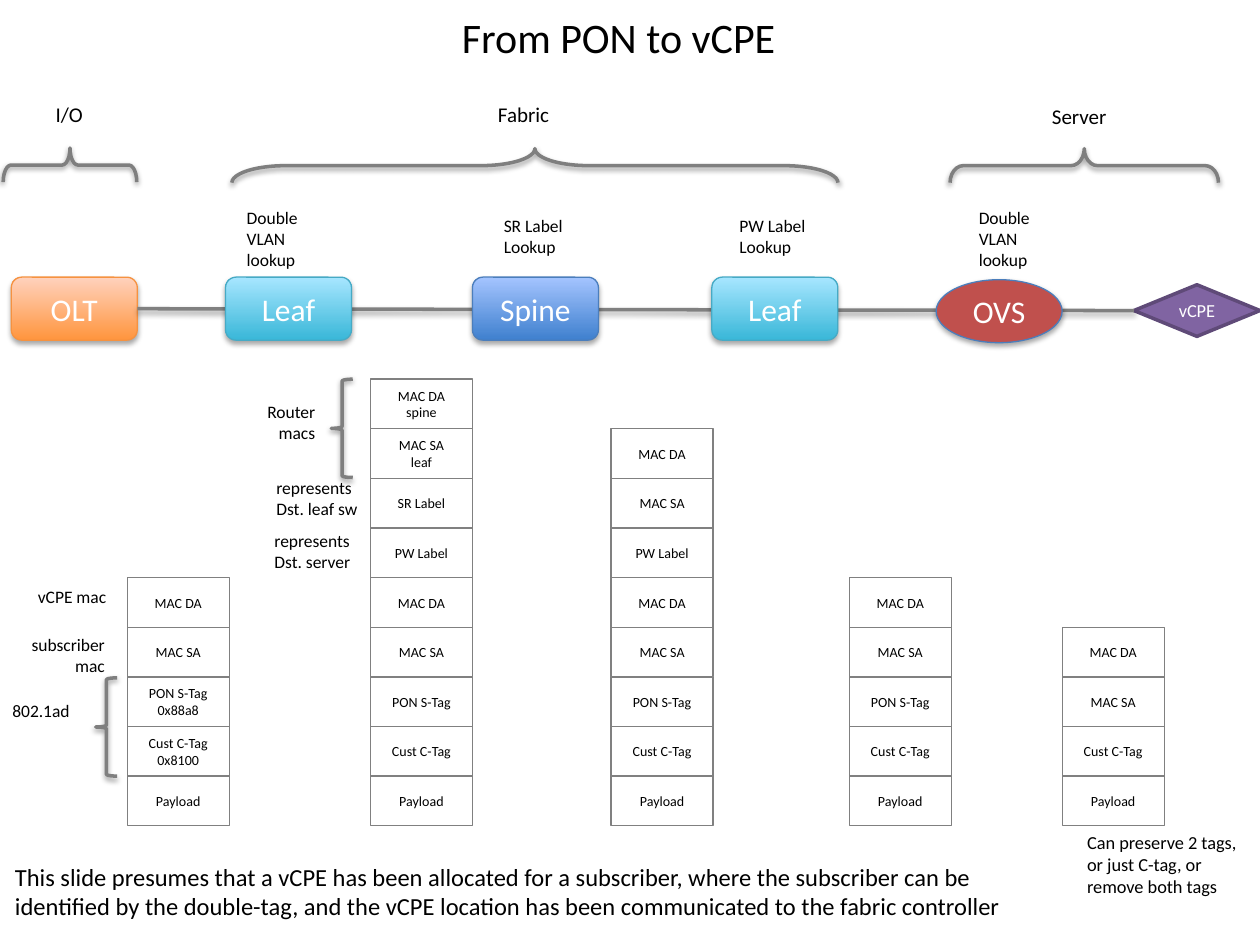
from lxml import etree
from pptx import Presentation
from pptx import util as u
from pptx.dml.color import RGBColor
from pptx.enum import shapes, text
from pptx.oxml.ns import qn

KIND = shapes.MSO_SHAPE
SIDE = text.PP_ALIGN
LEFT, MID, RIGHT = SIDE.LEFT, SIDE.CENTER, SIDE.RIGHT


def tint(code):
    return RGBColor.from_string(code)


class Deck:
    cols, rows = 100, 75
    face, ink, gray, edge = "Calibri", "000000", "7F7F7F", "808080"

    def __init__(self):
        self.show = Presentation()
        self.show.slide_width = u.Inches(10)
        self.show.slide_height = u.Inches(7.5)
        self.page = self.show.slides.add_slide(self.show.slide_layouts[6])

    def place(self, x, y, w, h):
        col = self.show.slide_width / self.cols
        row = self.show.slide_height / self.rows
        return [round(v) for v in (x * col, y * row, w * col, h * row)]

    def label(self, shape, words, size, ink, side, **frame):
        body = shape.text_frame
        for key, val in frame.items():
            setattr(body, key, val)
        body.text = words
        look = {"name": self.face, "size": u.Pt(size)}
        for para in body.paragraphs:
            para.alignment = side
            for key, val in look.items():
                setattr(para.font, key, val)
            para.font.color.rgb = tint(ink)

    def shade(self, item, alpha=None, dist=1.8):
        glow = etree.SubElement(item._element.spPr, qn("a:effectLst"))
        if alpha:
            cast = etree.SubElement(glow, qn("a:outerShdw"), blurRad=str(u.Pt(3.1)),
                                    dist=str(u.Pt(dist)), dir="5400000", rotWithShape="0")
            hue = etree.SubElement(cast, qn("a:srgbClr"), val="000000")
            etree.SubElement(hue, qn("a:alpha"), val=str(alpha * 1000))

    def stroke(self, item, code, width):
        item.line.color.rgb = tint(code)
        item.line.width = u.Pt(width)

    def shape(self, kind, spot, fills, code, width=0.75, alpha=None, dist=1.8):
        item = self.page.shapes.add_shape(kind, *self.place(*spot))
        if len(fills) == 2:
            item.fill.gradient()
            item.fill.gradient_angle = 90
            for stop, hue in zip(item.fill.gradient_stops, fills):
                stop.color.rgb = tint(hue)
        elif fills:
            item.fill.solid()
            item.fill.fore_color.rgb = tint(fills[0])
        else:
            item.fill.background()
        self.stroke(item, code, width)
        self.shade(item, alpha, dist)
        return item

    def node(self, words, kind, spot, fills, code, size=18, width=0.75, alpha=35):
        item = self.shape(kind, spot, fills, code, width, alpha)
        self.label(item, words, size, "FFFFFF", MID, word_wrap=False,
                   vertical_anchor=text.MSO_ANCHOR.MIDDLE)
        return item

    def link(self, start, end):
        wire = self.page.shapes.add_connector(shapes.MSO_CONNECTOR.STRAIGHT, 0, 0, 0, 0)
        wire.begin_connect(start, 3)
        wire.end_connect(end, 1)
        self.stroke(wire, self.edge, 2)
        self.shade(wire, 38, 1.6)

    def brace(self, spot, turn=0, bend=None):
        item = self.shape(KIND.LEFT_BRACE, spot, (), self.gray, 2, 38, 1.6)
        item.rotation = turn
        if bend:
            item.adjustments[0] = bend
            item.adjustments[1] = 0.5

    def stack(self, x, cells, base=61.6, pitch=3.94):
        for step, words in enumerate(reversed(cells)):
            spot = (x, base - step * pitch, 8.1, 3.94)
            item = self.shape(KIND.RECTANGLE, spot, (), self.edge)
            self.label(item, words, 8, self.ink, MID, word_wrap=False,
                       vertical_anchor=text.MSO_ANCHOR.MIDDLE)

    def note(self, words, spot, size=10, side=LEFT):
        item = self.page.shapes.add_textbox(*self.place(*spot))
        self.label(item, words, size, self.ink, side, word_wrap=True,
                   auto_size=text.MSO_AUTO_SIZE.SHAPE_TO_FIT_TEXT)


def main():
    deck = Deck()
    round_box = KIND.ROUNDED_RECTANGLE
    olt = deck.node("OLT", round_box, (0.9, 22, 10, 5), ("FF953E", "FFD2BD"), "F69240")
    vcpe = deck.node("vCPE", KIND.DIAMOND, (90, 22.6, 10, 4.1), ("8064A2",), "5F4A78",
                     10.5, 2, None)
    deck.link(olt, vcpe)
    aqua, blue = ("39B7D8", "A7E6FF"), ("3F80CE", "A4C4FF")
    for words, x, fills, code in (("Leaf", 17.9, aqua, "46AAC5"),
                                  ("Spine", 37.5, blue, "4B7EBC"),
                                  ("Leaf", 56.5, aqua, "46AAC5")):
        deck.node(words, round_box, (x, 22, 10, 5), fills, code)
    deck.node("OVS", KIND.OVAL, (74.3, 22.2, 10, 5), ("C0504D",), "4B7EBC")

    macs = ["MAC DA", "MAC SA"]
    tail = ["Cust C-Tag", "Payload"]
    inner = macs + ["PON S-Tag"] + tail
    for x, cells in (
        (10.1, macs + ["PON S-Tag\n0x88a8", "Cust C-Tag\n0x8100", "Payload"]),
        (29.4, ["MAC DA\nspine", "MAC SA\nleaf", "SR Label", "PW Label"] + inner),
        (48.5, macs + ["PW Label"] + inner),
        (67.4, inner),
        (84.3, macs + tail),
    ):
        deck.stack(x, cells)

    for spot, turn, bend in (
        ((7.6, 53.8, 1.7, 7.8), 0, None),
        ((26.3, 30.1, 1.7, 7.8), 0, None),
        ((41.1, -10.9, 2.7, 48.1), 90, 1.59),
        ((84.7, 2.5, 2.7, 21.3), 90, 0.39),
        ((4.2, 7.8, 2.7, 10.6), 90, 0.23),
    ):
        deck.brace(spot, turn, bend)

    for words, spot, side in (
        ("vCPE mac", (0.9, 46, 8.5, 2.7), RIGHT),
        ("802.1ad", (0, 55.1, 7.6, 2.7), LEFT),
        ("subscriber mac", (0, 49.8, 9.3, 4.4), RIGHT),
        ("represents\nDst. server", (20.8, 41.6, 8.5, 4.4), LEFT),
        ("represents\nDst. leaf sw", (20.95, 37.4, 8.5, 4.4), LEFT),
        ("Router\nmacs", (18.4, 31.3, 7.6, 4.4), RIGHT),
        ("Double VLAN lookup", (18.6, 15.9, 7.6, 6.1), LEFT),
        ("SR Label Lookup", (39, 16.6, 7.6, 4.4), LEFT),
        ("PW Label Lookup", (57.7, 16.6, 7.6, 4.4), LEFT),
        ("Double VLAN lookup", (76.7, 15.9, 7.6, 6.1), LEFT),
    ):
        deck.note(words, spot, side=side)
    for words, spot in (("Fabric", (32.6, 7.6, 17.9, 3)),
                        ("Server", (76.7, 7.7, 17.9, 3)),
                        ("I/O", (0.2, 7.6, 10.6, 3))):
        deck.note(words, spot, 12, MID)
    deck.note("Can preserve 2 tags, or just C-tag, or remove both tags",
              (85.3, 65.5, 14.7, 6.3), 10.5)
    deck.note("From PON to vCPE", (32.8, 0.4, 32.6, 5), 24, MID)
    deck.note("This slide presumes that a vCPE has been allocated for a subscriber, "
              "where the subscriber can be identified by the double-tag, and the vCPE "
              "location has been communicated to the fabric controller",
              (0.2, 67.9, 80.5, 5.7), 14)
    deck.show.save("out.pptx")


if __name__ == "__main__":
    main()
